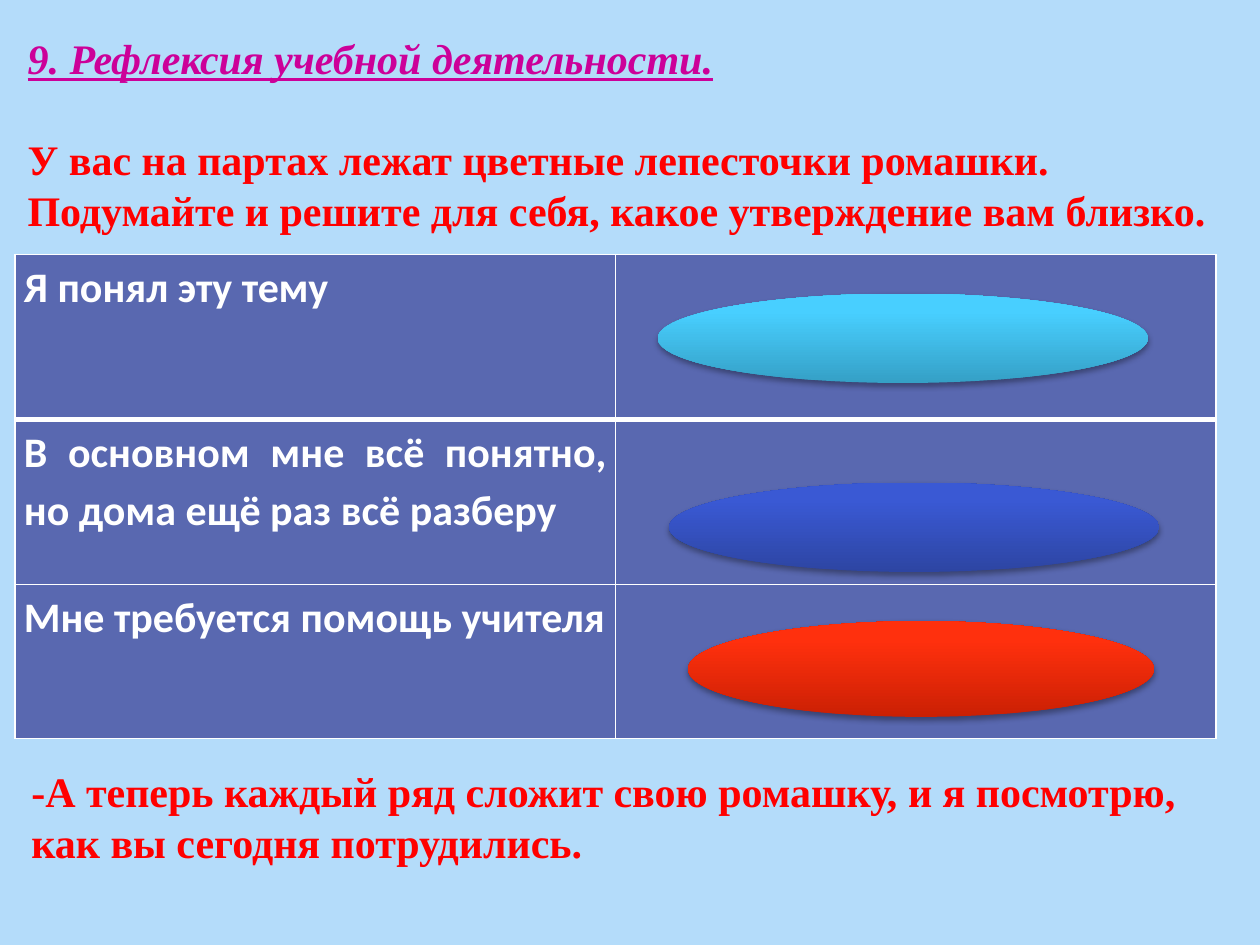
from dataclasses import dataclass

import pptx
import pptx.dml.color
import pptx.enum.shapes
import pptx.enum.text
import pptx.oxml
import pptx.oxml.ns
import pptx.util
from pptx.util import Inches

HUES = {"back": "B4DCFA", "title": "CC0099", "text": "FF0000",
        "cell": "5968B0", "white": "FFFFFF", "shade": "000000"}
NS = pptx.oxml.ns.nsdecls("a")


@dataclass
class Petal:
    left: float
    top: float
    width: float
    height: float
    stops: dict[int, str]


ROWS = [("Я понял эту тему", 1.31),
        ("В основном мне всё понятно, но дома ещё раз всё разберу", 1.31),
        ("Мне требуется помощь учителя", 1.22)]
PETALS = [
    Petal(5.22, 2.33, 3.89, 0.71, {0: "35A0C6", 80: "48CFFF", 100: "49CFFF"}),
    Petal(5.31, 3.83, 3.89, 0.71, {0: "2D45A3", 80: "3A59D4", 100: "3758D7"}),
    Petal(5.46, 4.93, 3.7, 0.76, {0: "CB2004", 80: "FF300D", 100: "FF310F"}),
]


def color(name: str) -> pptx.dml.color.RGBColor:
    return pptx.dml.color.RGBColor.from_string(HUES[name])


def style(para, face: str, hue: str) -> None:
    para.font.name = face
    para.font.size = pptx.util.Pt(24)
    para.font.bold = True
    para.font.color.rgb = color(hue)


def add_text(slide, left: float, top: float, height: float, lines: list[str]):
    box = slide.shapes.add_textbox(Inches(left), Inches(top), Inches(9.61), Inches(height))
    frame = box.text_frame
    frame.word_wrap = True
    frame.text = "\n".join(lines)
    for para in frame.paragraphs:
        style(para, "Times New Roman", "text")
    return frame.paragraphs


def set_edges(cell, widths: dict[str, int]) -> None:
    """Draw white cell borders; widths are points by side tag."""
    props = cell._tc.get_or_add_tcPr()
    for place, (side, width) in enumerate(widths.items()):
        props.insert(place, pptx.oxml.parse_xml(
            f'<a:{side} {NS} w="{pptx.util.Pt(width)}"><a:solidFill>'
            f'<a:srgbClr val="{HUES["white"]}"/></a:solidFill></a:{side}>'))


def add_grid(slide) -> None:
    total = sum(height for _, height in ROWS)
    table = slide.shapes.add_table(len(ROWS), 2, Inches(0.12), Inches(2.02),
                                   Inches(9.53), Inches(total)).table
    for num, (label, height) in enumerate(ROWS):
        table.rows[num].height = Inches(height)
        for cell in table.rows[num].cells:
            cell.margin_left = cell.margin_right = Inches(0.07)
            cell.margin_top = cell.margin_bottom = 0
            cell.fill.solid()
            cell.fill.fore_color.rgb = color("cell")
            set_edges(cell, {"lnL": 1, "lnR": 1, "lnT": 3 if num == 1 else 1,
                             "lnB": 3 if num == 0 else 1})
        cell = table.cell(num, 0)
        cell.text = label
        para = cell.text_frame.paragraphs[0]
        para.alignment = pptx.enum.text.PP_ALIGN.JUSTIFY
        para.line_spacing = 1.15
        style(para, "Calibri", "white")


def add_petal(slide, petal: Petal) -> None:
    """Add an ellipse shaded from bottom to top, with a soft shadow."""
    shape = slide.shapes.add_shape(
        pptx.enum.shapes.MSO_SHAPE.OVAL, Inches(petal.left), Inches(petal.top),
        Inches(petal.width), Inches(petal.height))
    shape.line.fill.background()
    shape.fill.gradient()
    shape.fill.gradient_angle = 90
    props = shape._element.spPr
    stops = props.find(".//" + pptx.oxml.ns.qn("a:gsLst"))
    for stop in list(stops):
        stops.remove(stop)
    for place, hue in petal.stops.items():
        stops.append(pptx.oxml.parse_xml(
            f'<a:gs {NS} pos="{place * 1000}"><a:srgbClr val="{hue}"/></a:gs>'))
    shape.shadow.inherit = False
    props.find(pptx.oxml.ns.qn("a:effectLst")).append(pptx.oxml.parse_xml(
        f'<a:outerShdw {NS} blurRad="{pptx.util.Pt(3.1)}" dist="{pptx.util.Pt(1.8)}" '
        f'dir="5400000" rotWithShape="0"><a:srgbClr val="{HUES["shade"]}">'
        '<a:alpha val="35000"/></a:srgbClr></a:outerShdw>'))


def main() -> None:
    deck = pptx.Presentation()
    deck.slide_width, deck.slide_height = Inches(10), Inches(7.5)
    slide = deck.slides.add_slide(deck.slide_layouts[6])
    slide.background.fill.solid()
    slide.background.fill.fore_color.rgb = color("back")

    title, task = add_text(slide, 0.12, 0.21, 1.72, [
        "9. Рефлексия учебной деятельности.",
        "У вас на партах лежат цветные лепесточки ромашки. "
        "Подумайте и решите для себя, какое утверждение вам близко."])
    title.font.italic = title.font.underline = True
    title.font.color.rgb = color("title")
    task.space_before = pptx.util.Pt(29)

    add_grid(slide)
    for petal in PETALS:
        add_petal(slide, petal)
    add_text(slide, 0.15, 6.03, 0.91, [
        "-А теперь каждый ряд сложит свою ромашку, и я посмотрю, "
        "как вы сегодня потрудились."])
    deck.save("out.pptx")


if __name__ == "__main__":
    main()
